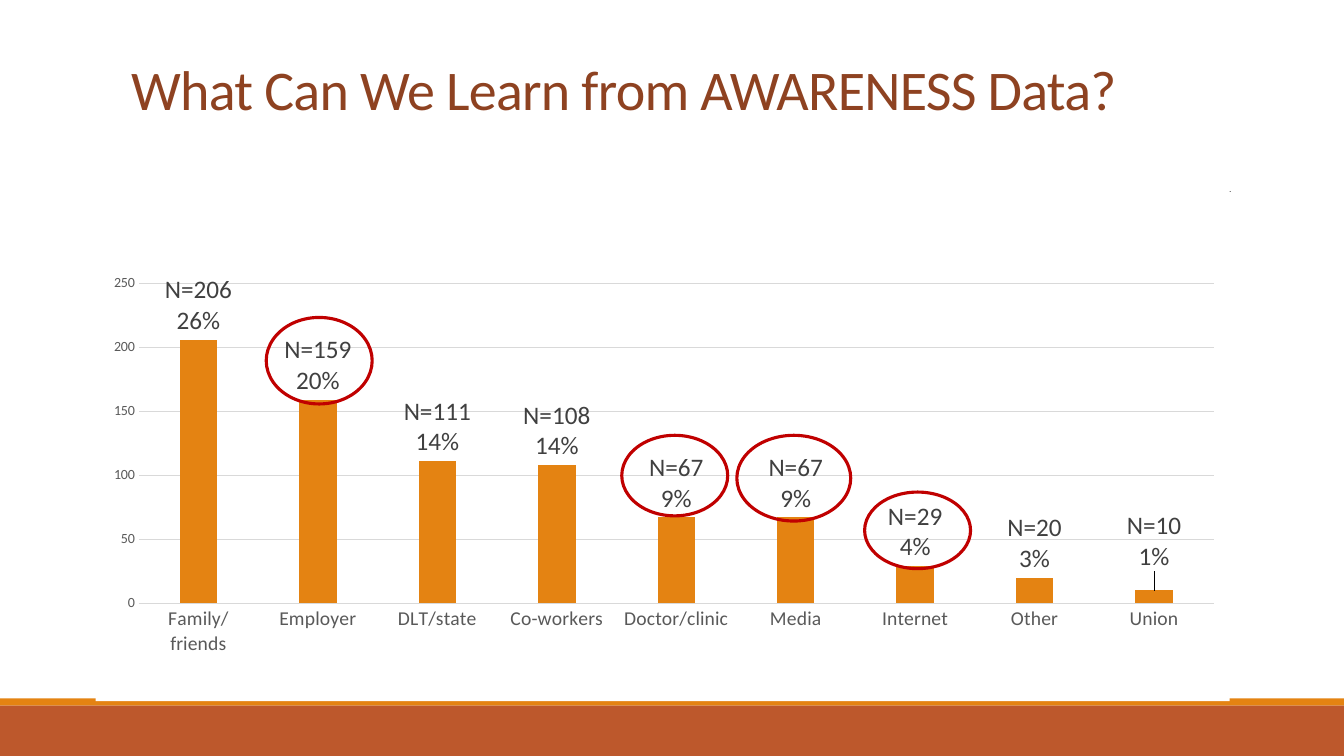
from dataclasses import dataclass

from lxml.etree import SubElement
from pptx import Presentation
from pptx.chart.data import CategoryChartData
from pptx.dml.color import RGBColor
from pptx.enum.chart import XL_CHART_TYPE, XL_LABEL_POSITION, XL_TICK_MARK
from pptx.enum.shapes import MSO_CONNECTOR, MSO_SHAPE
from pptx.enum.text import MSO_ANCHOR, MSO_AUTO_SIZE, PP_ALIGN
from pptx.oxml import parse_xml
from pptx.oxml.ns import nsdecls, qn
from pptx.util import Cm, Pt


@dataclass(frozen=True)
class Theme:
    font: str = "Calibri"
    title: str = "8E4221"
    orange: str = "E48312"
    rust: str = "BD582C"
    rule: str = "808080"
    grid: str = "D9D9D9"
    axis_text: str = "595959"
    label_text: str = "404040"
    highlight: str = "C00000"
    title_size: int = 40
    label_size: int = 18
    category_size: int = 14
    value_size: int = 10


@dataclass(frozen=True)
class Box:
    left: float
    top: float
    width: float
    height: float

    def inner(self, left, top, width, height):
        return Box(self.left + left, self.top + top, width, height)

    def lengths(self):
        return Cm(self.left), Cm(self.top), Cm(self.width), Cm(self.height)


THEME = Theme()
PAGE = Box(0, 0, 33.87, 19.05)
TITLE = "What Can We Learn from AWARENESS Data?"
# Source of awareness, number of answers, share in percent
AWARENESS = [
    ("Family/friends", 206, 26), ("Employer", 159, 20), ("DLT/state", 111, 14),
    ("Co-workers", 108, 14), ("Doctor/clinic", 67, 9), ("Media", 67, 9),
    ("Internet", 29, 4), ("Other", 20, 3), ("Union", 10, 1),
]
# Ovals around the highlighted labels, relative to the chart box
HIGHLIGHTS = [
    (4.3, 4.6, 2.67, 2.18), (13.26, 7.57, 2.67, 2.03),
    (16.16, 7.57, 2.87, 2.16), (19.38, 9, 2.67, 1.93),
]


def color(name):
    return RGBColor.from_string(name)


def style_font(font, size, name):
    font.name = THEME.font
    font.size = Pt(size)
    font.bold = False
    font.color.rgb = color(name)


def style_line(line, name, width):
    line.color.rgb = color(name)
    line.width = Pt(width)


def manual_layout(**values):
    items = "".join(f'<c:{key} val="{value}"/>' for key, value in values.items())
    return parse_xml(f'<c:layout {nsdecls("c")}><c:manualLayout>{items}'
                     "</c:manualLayout></c:layout>")


def add_footer(page, box):
    # Thin orange band above the rust band
    thin = 0.18
    bands = [(0, thin, THEME.orange), (thin, box.height - thin, THEME.rust)]
    for top, height, fill in bands:
        band = page.shapes.add_shape(
            MSO_SHAPE.RECTANGLE, *box.inner(0, top, box.width, height).lengths())
        band.shadow.inherit = False
        band.fill.solid()
        band.fill.fore_color.rgb = color(fill)
        band.line.fill.background()


def add_title(page, box):
    title = page.shapes.title
    title.left, title.top, title.width, title.height = box.lengths()
    frame = title.text_frame
    frame.text = TITLE
    frame.word_wrap = True
    frame.auto_size = MSO_AUTO_SIZE.NONE
    frame.vertical_anchor = MSO_ANCHOR.BOTTOM
    frame.margin_bottom = Cm(1.75)
    para = frame.paragraphs[0]
    para.alignment = PP_ALIGN.LEFT
    para.line_spacing = 0.85
    span = para.runs[0]
    style_font(span.font, THEME.title_size, THEME.title)
    span.font._element.set("spc", "-50")

    # Rule under the title
    left, bottom = Cm(box.left + 0.28), Cm(box.top + box.height)
    rule = page.shapes.add_connector(
        MSO_CONNECTOR.STRAIGHT, left, bottom, left + Cm(27.69), bottom)
    style_line(rule.line, THEME.rule, 0.5)
    SubElement(rule._element.spPr, qn("a:effectLst"))


def style_axes(chart):
    categories, values = chart.category_axis, chart.value_axis
    sizes = [(categories, THEME.category_size), (values, THEME.value_size)]
    for axis, size in sizes:
        axis.major_tick_mark = axis.minor_tick_mark = XL_TICK_MARK.NONE
        style_font(axis.tick_labels.font, size, THEME.axis_text)
    style_line(categories.format.line, THEME.grid, 0.75)
    values.format.line.fill.background()
    values.minimum_scale, values.maximum_scale, values.major_unit = 0, 250, 50
    style_line(values.major_gridlines.format.line, THEME.grid, 0.75)


def add_labels(series):
    labels = series.data_labels
    labels.show_value = True
    labels.position = XL_LABEL_POSITION.OUTSIDE_END
    style_font(labels.font, THEME.label_size, THEME.label_text)
    for index, (_, count, share) in enumerate(AWARENESS):
        label = series.points[index].data_label
        label.text_frame.text = f"N={count}\n{share}%"
        label.position = XL_LABEL_POSITION.OUTSIDE_END
        for para in label.text_frame.paragraphs:
            style_font(para.runs[0].font, THEME.label_size, THEME.label_text)


def add_awareness_chart(page, box):
    data = CategoryChartData()
    data.categories = [source for source, _, _ in AWARENESS]
    data.add_series("Series 1", [count for _, count, _ in AWARENESS])
    chart = page.shapes.add_chart(
        XL_CHART_TYPE.COLUMN_CLUSTERED, *box.lengths(), data).chart
    chart.has_title = chart.has_legend = False
    style_font(chart.font, THEME.value_size, "000000")
    style_axes(chart)

    # Columns
    plot = chart.plots[0]
    plot.vary_by_categories = False
    plot.gap_width, plot.overlap = 219, -27
    series = plot.series[0]
    series.format.fill.solid()
    series.format.fill.fore_color.rgb = color(THEME.orange)
    add_labels(series)

    # White background, fixed plot area, last label lifted a little
    root = chart.element
    root.find(qn("c:chart")).addnext(parse_xml(
        f'<c:spPr {nsdecls("c", "a")}><a:solidFill><a:srgbClr val="FFFFFF"/>'
        "</a:solidFill><a:ln><a:noFill/></a:ln></c:spPr>"))
    area = root.find(".//" + qn("c:plotArea"))
    for layout in area.findall(qn("c:layout")):
        area.remove(layout)
    area.insert(0, manual_layout(
        layoutTarget="inner", xMode="edge", yMode="edge",
        x=0.038, y=0.262, w=0.948, h=0.565))
    last_label = root.findall(".//" + qn("c:dLbl"))[-1]
    last_label.find(qn("c:idx")).addnext(manual_layout(x=0, y=-0.026))


def add_highlights(page, box):
    for place in HIGHLIGHTS:
        oval = page.shapes.add_shape(MSO_SHAPE.OVAL, *box.inner(*place).lengths())
        oval.shadow.inherit = False
        oval.fill.background()
        style_line(oval.line, THEME.highlight, 2.25)


def main():
    deck = Presentation()
    deck.slide_width, deck.slide_height = Cm(PAGE.width), Cm(PAGE.height)
    page = deck.slides.add_slide(deck.slide_layouts.get_by_name("Title Only"))
    chart_box = PAGE.inner(2.41, 3.4, 28.58, 14.27)
    add_footer(page, PAGE.inner(0, 17.6, PAGE.width, 1.45))
    add_title(page, PAGE.inner(3.05, 0.79, 27.94, 4.04))
    add_awareness_chart(page, chart_box)
    add_highlights(page, chart_box)
    deck.save("out.pptx")


if __name__ == "__main__":
    main()
